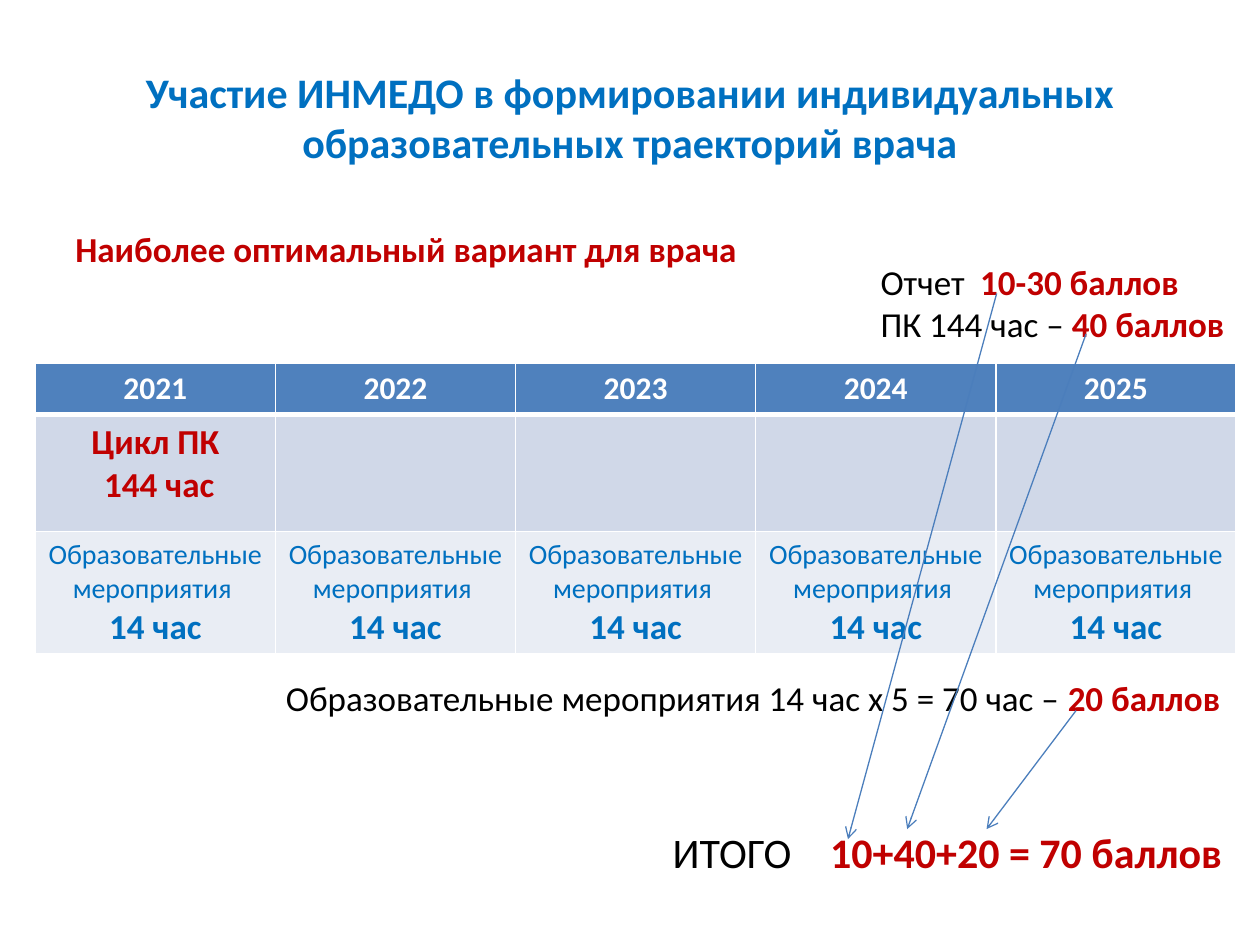
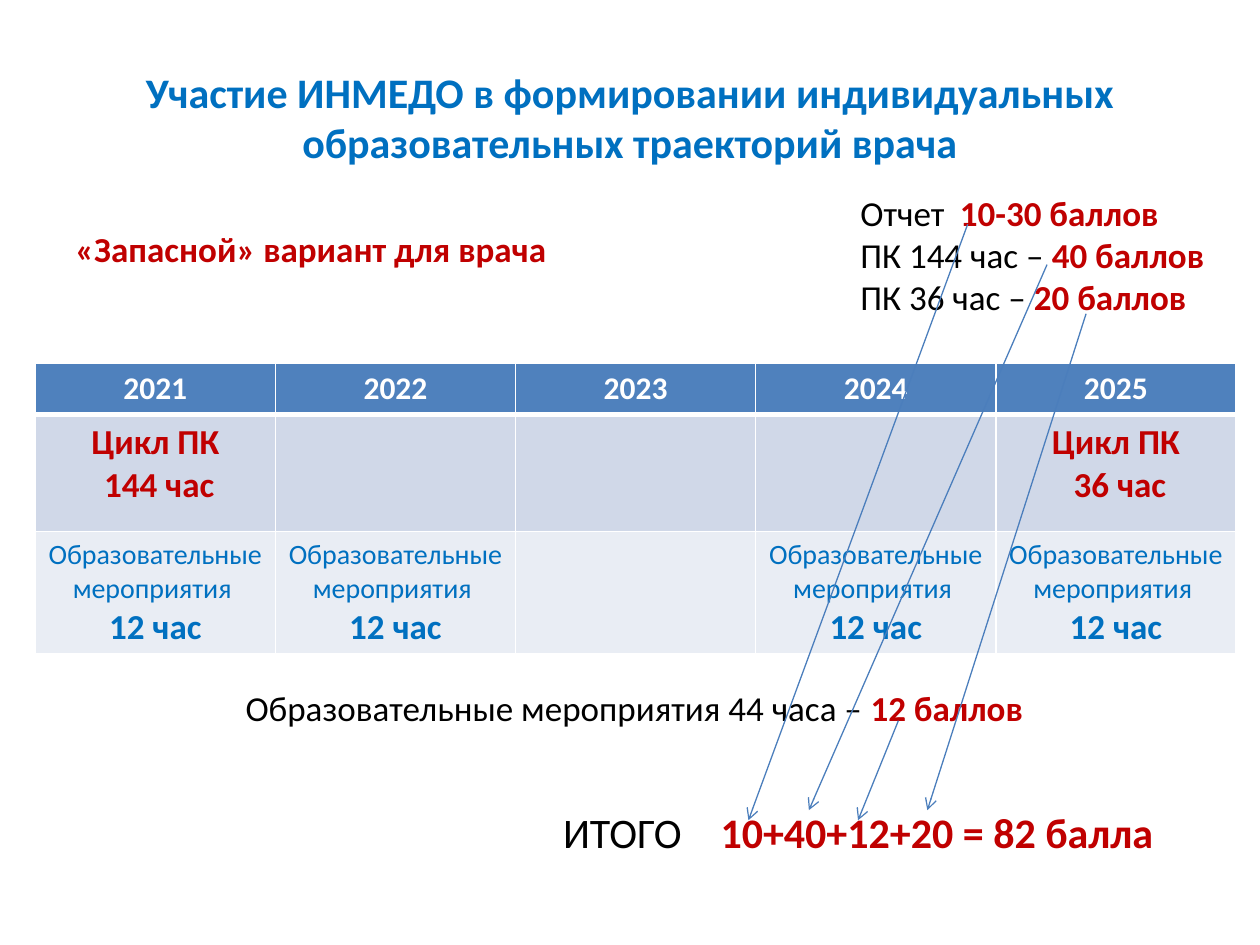
from collections import namedtuple

from lxml.etree import SubElement
from pptx import Presentation
from pptx.dml.color import RGBColor
from pptx.enum.shapes import MSO_CONNECTOR
from pptx.enum.text import MSO_ANCHOR, PP_ALIGN
from pptx.oxml.ns import qn
from pptx.util import Inches, Pt

W, H = Inches(10), Inches(7.5)
COL, ROW = W / 100, H / 75
FONT = "Calibri"
COLORS = {
    "blue": "0070C0", "red": "C00000", "black": "000000", "white": "FFFFFF",
    "arrow": "4B7EBC", "header": "4F81BD", "cycle": "D0D8E8", "events": "E9EDF4",
}
YEARS = ["2021", "2022", "2023", "2024", "2025"]
TITLE = "Участие ИНМЕДО в формировании индивидуальных образовательных траекторий врача"

Box = namedtuple("Box", "col row cols rows")
TITLE_BOX = Box(5, 3, 90, 12.5)
VARIANT_BOX = Box(5, 17.5, 90, 4.4)
TABLE_BOX = Box(2.8, 28.8, 95.3, 23.1)
TABLE_ROWS = (4.1, 9.3, 9.7)


def rgb(name):
    return RGBColor.from_string(COLORS[name])


def x(cols):
    return round(cols * COL)


def y(rows):
    return round(rows * ROW)


def place(box):
    return x(box.col), y(box.row), x(box.cols), y(box.rows)


def write(p, text, size=20, color="black", bold=False, align=None):
    """Add a formatted run to paragraph p."""
    if align is not None:
        p.alignment = align
    r = p.add_run()
    r.text = text
    r.font.name, r.font.size, r.font.bold = FONT, Pt(size), bold
    r.font.color.rgb = rgb(color)


def add_paragraph(tf, index):
    return tf.add_paragraph() if index else tf.paragraphs[0]


def text_box(s, box, anchor=MSO_ANCHOR.TOP):
    tf = s.shapes.add_textbox(*place(box)).text_frame
    tf.word_wrap = True
    tf.vertical_anchor = anchor
    return tf


def heading(s, box, text, **fmt):
    tf = text_box(s, box, MSO_ANCHOR.MIDDLE)
    write(tf.paragraphs[0], text, bold=True, **fmt)


def scores(s, box, lines, size=20, tab=7.9):
    """Write lines of a plain label followed by a red score."""
    tf = text_box(s, box)
    for i, (label, score) in enumerate(lines):
        p = add_paragraph(tf, i)
        if "\t" in label:
            tabs = SubElement(p._p.get_or_add_pPr(), qn("a:tabLst"))
            SubElement(tabs, qn("a:tab"), pos=str(x(tab)), algn="l")
        write(p, label, size=size)
        write(p, score, size=size, color="red", bold=True)


def fill_cell(cell, fill, lines, bottom=1):
    """Set borders, fill and centred lines of (text, format)."""
    tcPr = cell._tc.get_or_add_tcPr()
    for side, width in (("lnL", 1), ("lnR", 1), ("lnT", 1), ("lnB", bottom)):
        ln = SubElement(tcPr, qn(f"a:{side}"), w=str(Pt(width)))
        SubElement(SubElement(ln, qn("a:solidFill")), qn("a:srgbClr"), val=COLORS["white"])
    cell.fill.solid()
    cell.fill.fore_color.rgb = rgb(fill)
    for i, (text, fmt) in enumerate(lines):
        write(add_paragraph(cell.text_frame, i), text, align=PP_ALIGN.CENTER, **fmt)


def plan_table(s, box, cycles, events):
    """Show the hours of cycles and events, each a dict keyed by year."""
    table = s.shapes.add_table(len(TABLE_ROWS), len(YEARS), *place(box)).table
    for row, height in zip(table.rows, TABLE_ROWS):
        row.height = y(height)
    red, blue = dict(color="red", bold=True), dict(color="blue", bold=True)
    small = dict(color="blue", size=16)
    for c, year in enumerate(YEARS):
        table.columns[c].width = x(box.cols / len(YEARS))
        cycle = [("Цикл ПК", red), (f" {cycles[year]} час", red)] if year in cycles else []
        event = ([("Образовательные мероприятия ", small), (f"{events[year]} час", blue)]
                 if year in events else [])
        header = [(year, dict(size=18, color="white", bold=True))]
        fill_cell(table.cell(0, c), "header", header, bottom=3)
        fill_cell(table.cell(1, c), "cycle", cycle)
        fill_cell(table.cell(2, c), "events", event)


def arrow(s, source, start, target, end):
    """Draw an arrow between offsets inside the source and target boxes."""
    line = s.shapes.add_connector(
        MSO_CONNECTOR.STRAIGHT,
        x(source.col + start[0]), y(source.row + start[1]),
        x(target.col + end[0]), y(target.row + end[1]))
    line.line.color.rgb = rgb("arrow")
    line.line.width = Pt(0.75)
    SubElement(line.line._get_or_add_ln(), qn("a:tailEnd"), type="arrow")
    SubElement(line._element.spPr, qn("a:effectLst"))


def variant_slide(prs, name, cycles, events, boxes, points, events_score, total, arrows):
    s = prs.slides.add_slide(prs.slide_layouts[6])
    heading(s, TITLE_BOX, TITLE, size=24, color="blue", align=PP_ALIGN.CENTER)
    heading(s, VARIANT_BOX, name, color="red")
    plan_table(s, TABLE_BOX, cycles, events)
    scores(s, boxes["points"], points)
    scores(s, boxes["events"], [events_score])
    scores(s, boxes["total"], [("ИТОГО\t", total)], size=24, tab=12.5)
    for source, start, end in arrows:
        arrow(s, boxes[source], start, boxes["total"], end)


def main():
    prs = Presentation()
    prs.slide_width, prs.slide_height = W, H
    points = [("Отчет\t", "10-30 баллов"), ("ПК 144 час – ", "40 баллов")]
    variant_slide(
        prs, "Наиболее оптимальный вариант для врача",
        cycles={"2021": 144}, events=dict.fromkeys(YEARS, 14),
        boxes={"points": Box(68.9, 20.2, 29.5, 7.7),
               "events": Box(21.7, 53.2, 76.8, 4.4),
               "total": Box(52.4, 65.1, 45.9, 5)},
        points=points,
        events_score=("Образовательные мероприятия 14 час х 5 = 70 час – ", "20 баллов"),
        total="10+40+20 = 70 баллов",
        arrows=[("events", (63.7, 3.2), (25.9, 0.7)),
                ("points", (17.3, 6.3), (19.6, 0.7)),
                ("points", (10.2, 3.1), (14.9, 1.5))])
    variant_slide(
        prs, "«Запасной» вариант для врача",
        cycles={"2021": 144, "2025": 36},
        events={year: 12 for year in YEARS if year != "2023"},
        boxes={"points": Box(67.3, 14.7, 29.5, 11.1),
               "events": Box(18.5, 54, 64.2, 4.4),
               "total": Box(43.7, 63.5, 49.2, 5)},
        points=points + [("ПК 36 час – ", "20 баллов")],
        events_score=("Образовательные мероприятия 44 часа – ", "12 баллов"),
        total="10+40+12+20 = 82 балла",
        arrows=[("points", (9.5, 3.1), (15.7, 1.6)),
                ("points", (15.8, 6.3), (20.5, 0.8)),
                ("points", (18.9, 10.2), (29.9, 0.8)),
                ("events", (52.8, 3.2), (24.4, 1.6))])
    prs.save("out.pptx")


if __name__ == "__main__":
    main()
